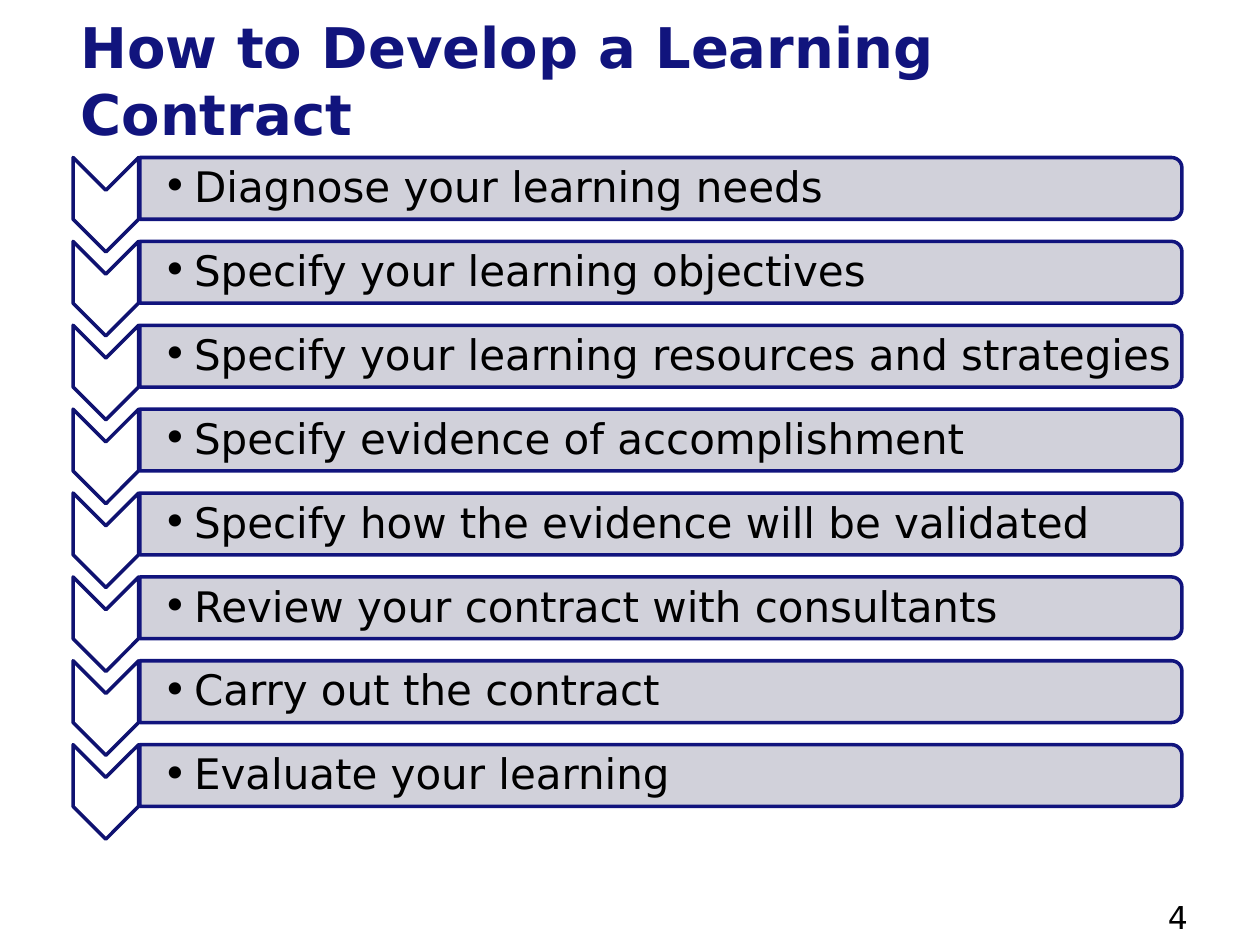
from lxml import etree
from pptx import Presentation
from pptx.dml.color import RGBColor
from pptx.enum.shapes import MSO_SHAPE
from pptx.enum.text import MSO_ANCHOR
from pptx.oxml.ns import qn
from pptx.util import Inches, Pt

CHEVRON = MSO_SHAPE.CHEVRON
BAR = MSO_SHAPE.ROUND_2_SAME_RECTANGLE
TOP, MIDDLE = MSO_ANCHOR.TOP, MSO_ANCHOR.MIDDLE

FONT = "DejaVu Sans"
NAVY, DARK_NAVY, GREY = "11147D", "0F1271", "CCCCD7"
WHITE, BLACK = "FFFFFF", "000000"

STEPS = [
    "Diagnose your learning needs",
    "Specify your learning objectives",
    "Specify your learning resources and strategies",
    "Specify evidence of accomplishment",
    "Specify how the evidence will be validated",
    "Review your contract with consultants",
    "Carry out the contract",
    "Evaluate your learning",
]
FIRST_TOP, LAST_TOP = 1.25, 5.91
PITCH = (LAST_TOP - FIRST_TOP) / (len(STEPS) - 1)


def color(hex_string):
    return RGBColor.from_string(hex_string)


class SlideBuilder:
    def __init__(self, slide, font):
        self.slide = slide
        self.font = font

    def turned_shape(self, kind, left, top, width, height, fill, line, opacity=100):
        """Add a shape turned by 90 degrees; the box given is the one seen."""
        shift = (width - height) / 2
        shape = self.slide.shapes.add_shape(
            kind, Inches(left + shift), Inches(top - shift), Inches(height), Inches(width))
        shape.rotation = 90
        shape.shadow.inherit = False
        shape.fill.solid()
        shape.fill.fore_color.rgb = color(fill)
        shape.line.color.rgb = color(line)
        shape.line.width = Pt(2)
        if opacity < 100:
            fill_color = shape._element.spPr.find(qn("a:solidFill"))[0]
            etree.SubElement(fill_color, qn("a:alpha"), val=str(opacity * 1000))

    def text(self, words, left, top, width, height, size, fill=BLACK, bold=False,
             anchor=MIDDLE, insets=(0.1, 0.05, 0.1, 0.05), spacing=1.0, bullet=False):
        box = self.slide.shapes.add_textbox(
            Inches(left), Inches(top), Inches(width), Inches(height))
        frame = box.text_frame
        frame.word_wrap = True
        frame.vertical_anchor = anchor
        (frame.margin_left, frame.margin_top,
         frame.margin_right, frame.margin_bottom) = map(Inches, insets)
        frame.text = words
        paragraph = frame.paragraphs[0]
        paragraph.line_spacing = spacing
        if bullet:
            properties = paragraph._p.get_or_add_pPr()
            properties.set("marL", str(Inches(0.25)))
            properties.set("indent", str(-Inches(0.25)))
            etree.SubElement(properties, qn("a:buFont"), typeface=self.font)
            etree.SubElement(properties, qn("a:buChar"), char="•")
        font = paragraph.runs[0].font
        font.name = self.font
        font.size = Pt(size)
        font.bold = bold
        font.color.rgb = color(fill)

    def step(self, words, top):
        self.turned_shape(CHEVRON, 0.58, top, 0.52, 0.75, WHITE, DARK_NAVY)
        self.turned_shape(BAR, 1.11, top, 8.27, 0.49, GREY, NAVY, opacity=90)
        self.text(words, 1.11, top + 0.03, 8.25, 0.44, 24,
                  insets=(0.18, 0.02, 0.02, 0.02), spacing=0.9, bullet=True)


def main():
    presentation = Presentation()
    presentation.slide_width = Inches(10)
    presentation.slide_height = Inches(7.5)
    slide = presentation.slides.add_slide(presentation.slide_layouts[6])
    builder = SlideBuilder(slide, FONT)

    # Title
    builder.text("How to Develop a Learning Contract", 0.33, 0.17, 9.5, 0.92, 32,
                 NAVY, bold=True, insets=(0.31, 0.05, 0.31, 0.05))

    # Step list
    for index, words in enumerate(STEPS):
        builder.step(words, FIRST_TOP + index * PITCH)

    # Page number
    builder.text("4", 9.17, 7.08, 0.83, 0.27, 18, anchor=TOP)

    presentation.save("out.pptx")


if __name__ == "__main__":
    main()
